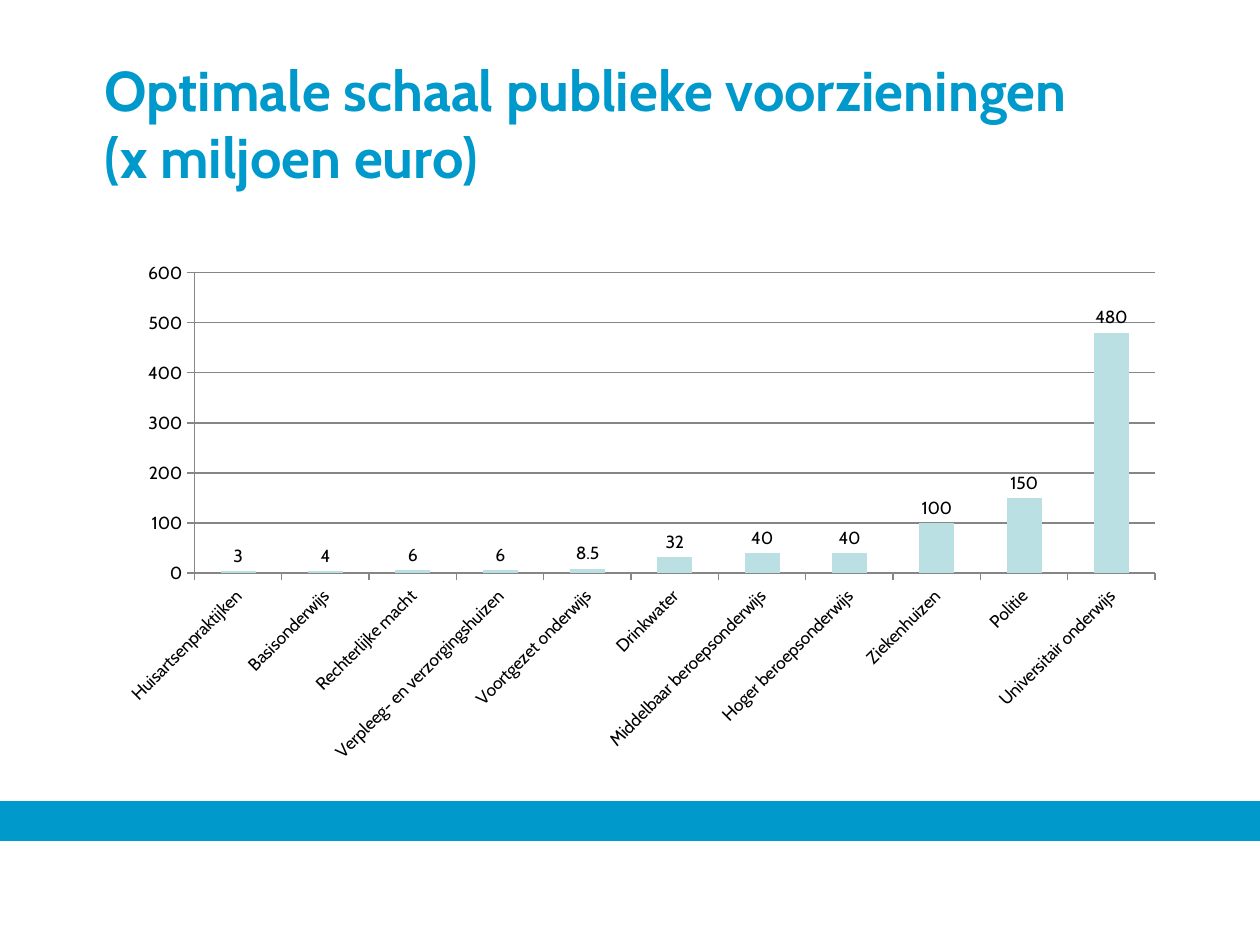
from lxml import etree
from pptx import Presentation
from pptx.chart.data import CategoryChartData
from pptx.dml.color import RGBColor
from pptx.enum.chart import XL_CHART_TYPE, XL_LABEL_POSITION, XL_TICK_MARK
from pptx.enum.shapes import MSO_SHAPE
from pptx.enum.text import MSO_ANCHOR
from pptx.oxml.ns import qn
from pptx.util import Inches, Pt

COLUMN = XL_CHART_TYPE.COLUMN_CLUSTERED
ABOVE = XL_LABEL_POSITION.OUTSIDE_END
TICK = XL_TICK_MARK.OUTSIDE
RECT = MSO_SHAPE.RECTANGLE
TOP = MSO_ANCHOR.TOP

TITLE = "Optimale schaal publieke voorzieningen\v(x miljoen euro)"
SCALES = [
    ("Huisartsenpraktijken", 3),
    ("Basisonderwijs", 4),
    ("Rechterlijke macht", 6),
    ("Verpleeg- en verzorgingshuizen", 6),
    ("Voortgezet onderwijs", 8.5),
    ("Drinkwater", 32),
    ("Middelbaar beroepsonderwijs", 40),
    ("Hoger beroepsonderwijs", 40),
    ("Ziekenhuizen", 100),
    ("Politie", 150),
    ("Universitair onderwijs", 480),
]
THEME = {
    "font": "Cabin", "title": 32, "label": 10, "blue": "0099CC",
    "bar": "BBE0E3", "grid": "868686", "text": "000000",
}
LEFT, WIDTH = 0.83, 8.5
PLOT = {"x": 0.084, "y": 0.04, "w": 0.897, "h": 0.577}


def tint(name):
    """Return a theme colour."""
    return RGBColor.from_string(THEME[name])


def style(font, size, color, bold=False):
    """Set the face, size and colour of a font."""
    font.name = THEME["font"]
    font.size = Pt(THEME[size])
    font.bold = bold
    font.color.rgb = tint(color)


def add_text(slide, text, box, size="label", color="text", bold=False):
    """Add a wrapped text box without side insets."""
    frame = slide.shapes.add_textbox(*map(Inches, box)).text_frame
    frame.word_wrap = True
    frame.vertical_anchor = TOP
    frame.margin_left = frame.margin_right = 0
    frame.text = text
    for run in frame.paragraphs[0].runs:
        style(run.font, size, color, bold)


def add_band(slide):
    """Add the blue band near the foot of the slide."""
    band = slide.shapes.add_shape(RECT, *map(Inches, (0, 6.36, 10, 0.31)))
    band.shadow.inherit = False
    band.fill.solid()
    band.fill.fore_color.rgb = tint("blue")
    band.line.color.rgb = tint("blue")
    band.line.width = Pt(0.75)


def set_plot(chart):
    """Fix the inner plot area as shares of the chart frame."""
    area = chart._chartSpace.chart.plotArea
    for old in area.findall(qn("c:layout")):
        area.remove(old)
    layout = etree.Element(qn("c:layout"))
    manual = etree.SubElement(layout, qn("c:manualLayout"))
    parts = [("layoutTarget", "inner"), ("xMode", "edge"), ("yMode", "edge")]
    for tag, value in parts + list(PLOT.items()):
        etree.SubElement(manual, qn("c:" + tag)).set("val", str(value))
    area.insert(0, layout)


def add_scales(slide):
    """Add the column chart of optimal scales."""
    data = CategoryChartData()
    names, values = zip(*SCALES)
    data.categories = names
    data.add_series("Series 1", values)
    box = map(Inches, (LEFT, 2, WIDTH, 4.13))
    chart = slide.shapes.add_chart(COLUMN, *box, data).chart
    chart.has_legend = chart.has_title = False
    style(chart.font, "label", "text")
    set_plot(chart)

    plot = chart.plots[0]
    plot.gap_width = 150
    plot.vary_by_categories = False
    bars = plot.series[0]
    bars.format.fill.solid()
    bars.format.fill.fore_color.rgb = tint("bar")
    labels = bars.data_labels
    labels.show_value = True
    labels.position = ABOVE
    style(labels.font, "label", "text")

    across, up = chart.category_axis, chart.value_axis
    up.minimum_scale, up.maximum_scale, up.major_unit = 0, 600, 100
    up.has_major_gridlines = True
    for axis in (across, up):
        axis.major_tick_mark = TICK
        style(axis.tick_labels.font, "label", "text")
    for part in (across, up, up.major_gridlines):
        part.format.line.color.rgb = tint("grid")
        part.format.line.width = Pt(0.75)
    body = across._element.find(qn("c:txPr")).find(qn("a:bodyPr"))
    body.set("rot", "-2700000")
    body.set("vert", "horz")


def main():
    """Build and save the slide."""
    deck = Presentation()
    deck.slide_width, deck.slide_height = Inches(10), Inches(7.5)
    slide = deck.slides.add_slide(deck.slide_layouts[6])
    add_band(slide)
    add_text(slide, TITLE, (LEFT, 0.39, WIDTH, 1.25),
             size="title", color="blue", bold=True)
    add_scales(slide)
    deck.save("out.pptx")


if __name__ == "__main__":
    main()
